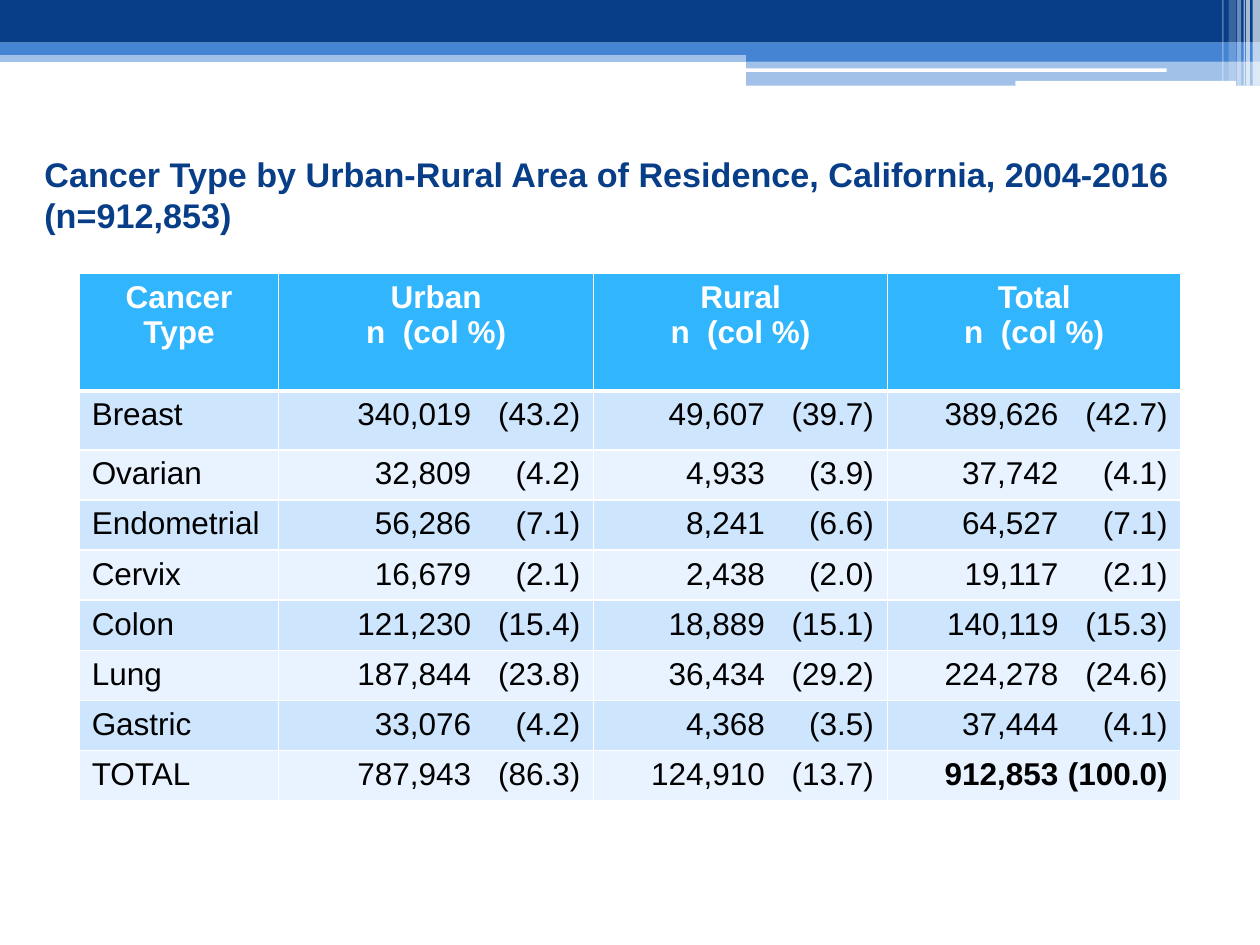
from lxml import etree
from pptx import Presentation
from pptx import util as u
from pptx.dml.color import RGBColor
from pptx.enum import shapes, text
from pptx.oxml import ns

NAVY = RGBColor(0x07, 0x3E, 0x87)
BLUE = RGBColor(0x45, 0x84, 0xD3)
SKY = RGBColor(0x31, 0xB6, 0xFD)
BAND_DARK = RGBColor(0xCE, 0xE5, 0xFE)
BAND_LIGHT = RGBColor(0xE8, 0xF3, 0xFF)
WHITE = RGBColor(0xFF, 0xFF, 0xFF)
BLACK = RGBColor(0, 0, 0)

RECT = shapes.MSO_SHAPE.RECTANGLE
ROUND = shapes.MSO_SHAPE.ROUNDED_RECTANGLE

BARS = [
    (RECT, 0, 1.02, 25.4, 0.23, BLUE, 50),
    (RECT, 0, 0, 25.4, 0.86, NAVY, 100),
    (RECT, 0, 0.86, 25.4, 0.25, BLUE, 100),
    (RECT, 15.04, 0.99, 10.36, 0.25, BLUE, 100),
    (RECT, 15.04, 1.22, 10.36, 0.51, BLUE, 50),
    (ROUND, 15.01, 1.38, 8.51, 0.07, WHITE, 100),
    (ROUND, 20.47, 1.63, 4.45, 0.1, WHITE, 100),
]
STRIPES = [
    (25.25, 0.15, 1.73, 65),
    (25.12, 0.08, 1.73, 65),
    (25.07, 0.03, 1.73, 60),
    (24.94, 0.08, 1.73, 40),
    (24.77, 0.15, 1.63, 20),
    (24.64, 0.03, 1.63, 30),
]

HEADERS = ["Cancer Type", "Urban\nn  (col %)", "Rural\nn  (col %)", "Total\nn  (col %)"]
ROWS = [
    ("Breast", "340,019 (43.2)", "49,607 (39.7)", "389,626 (42.7)"),
    ("Ovarian", "32,809 (4.2)", "4,933 (3.9)", "37,742 (4.1)"),
    ("Endometrial", "56,286 (7.1)", "8,241 (6.6)", "64,527 (7.1)"),
    ("Cervix", "16,679 (2.1)", "2,438 (2.0)", "19,117 (2.1)"),
    ("Colon", "121,230 (15.4)", "18,889 (15.1)", "140,119 (15.3)"),
    ("Lung", "187,844 (23.8)", "36,434 (29.2)", "224,278 (24.6)"),
    ("Gastric", "33,076 (4.2)", "4,368 (3.5)", "37,444 (4.1)"),
    ("TOTAL", "787,943 (86.3)", "124,910 (13.7)", "912,853 (100.0)"),
]
COL_WIDTHS = [4.02, 6.35, 5.92, 5.92]
ROW_HEIGHTS = [2.37, 1.19] + [1.01] * 7


class Deck:
    font = "Arial"
    cell_size = 18
    cell_margin = 0.25
    percent_width = 2.2

    def __init__(self, prs):
        self.s = prs.slides.add_slide(prs.slide_layouts[5])

    def style(self, tf, size, color, bold, align):
        for p in tf.paragraphs:
            p.alignment = align
            for r in p.runs:
                r.font.name = self.font
                r.font.size = u.Pt(size)
                r.font.bold = bold
                r.font.color.rgb = color

    def bar(self, kind, x, y, w, h, color, opacity=100):
        sp = self.s.shapes.add_shape(kind, u.Cm(x), u.Cm(y), u.Cm(w), u.Cm(h))
        sp.shadow.inherit = False
        sp.line.fill.background()
        sp.fill.solid()
        sp.fill.fore_color.rgb = color
        if opacity < 100:
            clr = sp.fill._xPr.find(".//" + ns.qn("a:srgbClr"))
            etree.SubElement(clr, ns.qn("a:alpha"), val=str(opacity * 1000))

    def title(self, words, x, y, w, h):
        sp = self.s.shapes.title
        sp.left, sp.top, sp.width, sp.height = u.Cm(x), u.Cm(y), u.Cm(w), u.Cm(h)
        tf = sp.text_frame
        tf.text = words
        tf.word_wrap = True
        tf.auto_size = text.MSO_AUTO_SIZE.NONE
        tf.vertical_anchor = text.MSO_ANCHOR.MIDDLE
        self.style(tf, 19.5, NAVY, True, text.PP_ALIGN.LEFT)

    def borders(self, cell, **widths):
        tc_pr = cell._tc.get_or_add_tcPr()
        for i, side in enumerate("LRTB"):
            ln = etree.Element(ns.qn("a:ln" + side), w=str(u.Pt(widths.get(side, 1))))
            fill = etree.SubElement(ln, ns.qn("a:solidFill"))
            etree.SubElement(fill, ns.qn("a:srgbClr"), val=str(WHITE))
            tc_pr.insert(i, ln)

    def tab_stops(self, p, *positions):
        tabs = etree.SubElement(p._p.get_or_add_pPr(), ns.qn("a:tabLst"))
        for pos in positions:
            etree.SubElement(tabs, ns.qn("a:tab"), pos=str(u.Cm(pos)), algn="r")

    def header_cell(self, cell, words):
        cell.text_frame.text = words
        self.style(cell.text_frame, self.cell_size, WHITE, True, text.PP_ALIGN.CENTER)

    def body_cell(self, cell, words, bold=False):
        cell.text_frame.text = words
        self.style(cell.text_frame, self.cell_size, BLACK, bold, text.PP_ALIGN.LEFT)

    def count_cell(self, cell, value, width, bold):
        count, percent = value.split()
        self.body_cell(cell, f"\t{count}\t{percent}", bold)
        edge = width - 2 * self.cell_margin - 0.02
        self.tab_stops(cell.text_frame.paragraphs[0], edge - self.percent_width, edge)

    def table(self, x, y):
        table = self.s.shapes.add_table(
            len(ROW_HEIGHTS), len(COL_WIDTHS), u.Cm(x), u.Cm(y),
            u.Cm(sum(COL_WIDTHS)), u.Cm(sum(ROW_HEIGHTS))).table
        for column, width in zip(table.columns, COL_WIDTHS):
            column.width = u.Cm(width)
        for row, height in zip(table.rows, ROW_HEIGHTS):
            row.height = u.Cm(height)
        for i, values in enumerate([HEADERS] + ROWS):
            for j, value in enumerate(values):
                cell = table.cell(i, j)
                cell.margin_left = cell.margin_right = u.Cm(self.cell_margin)
                self.borders(cell, T=3 if i == 1 else 1, B=3 if i == 0 else 1)
                cell.fill.solid()
                if i == 0:
                    cell.fill.fore_color.rgb = SKY
                    self.header_cell(cell, value)
                    continue
                cell.fill.fore_color.rgb = BAND_DARK if i % 2 else BAND_LIGHT
                if j == 0:
                    self.body_cell(cell, value)
                else:
                    grand_total = i == len(ROWS) and j == len(HEADERS) - 1
                    self.count_cell(cell, value, COL_WIDTHS[j], grand_total)


def main():
    prs = Presentation()
    prs.slide_width, prs.slide_height = u.Cm(25.4), u.Cm(19.05)
    deck = Deck(prs)
    for bar in BARS:
        deck.bar(*bar)
    for x, w, h, opacity in STRIPES:
        deck.bar(RECT, x, 0, w, h, WHITE, opacity)
    deck.table(1.6, 5.51)
    deck.title("Cancer Type by Urban-Rural Area of Residence, California, "
               "2004-2016 (n=912,853)", 0.64, 2.97, 24.16, 1.91)
    prs.save("out.pptx")


if __name__ == "__main__":
    main()
